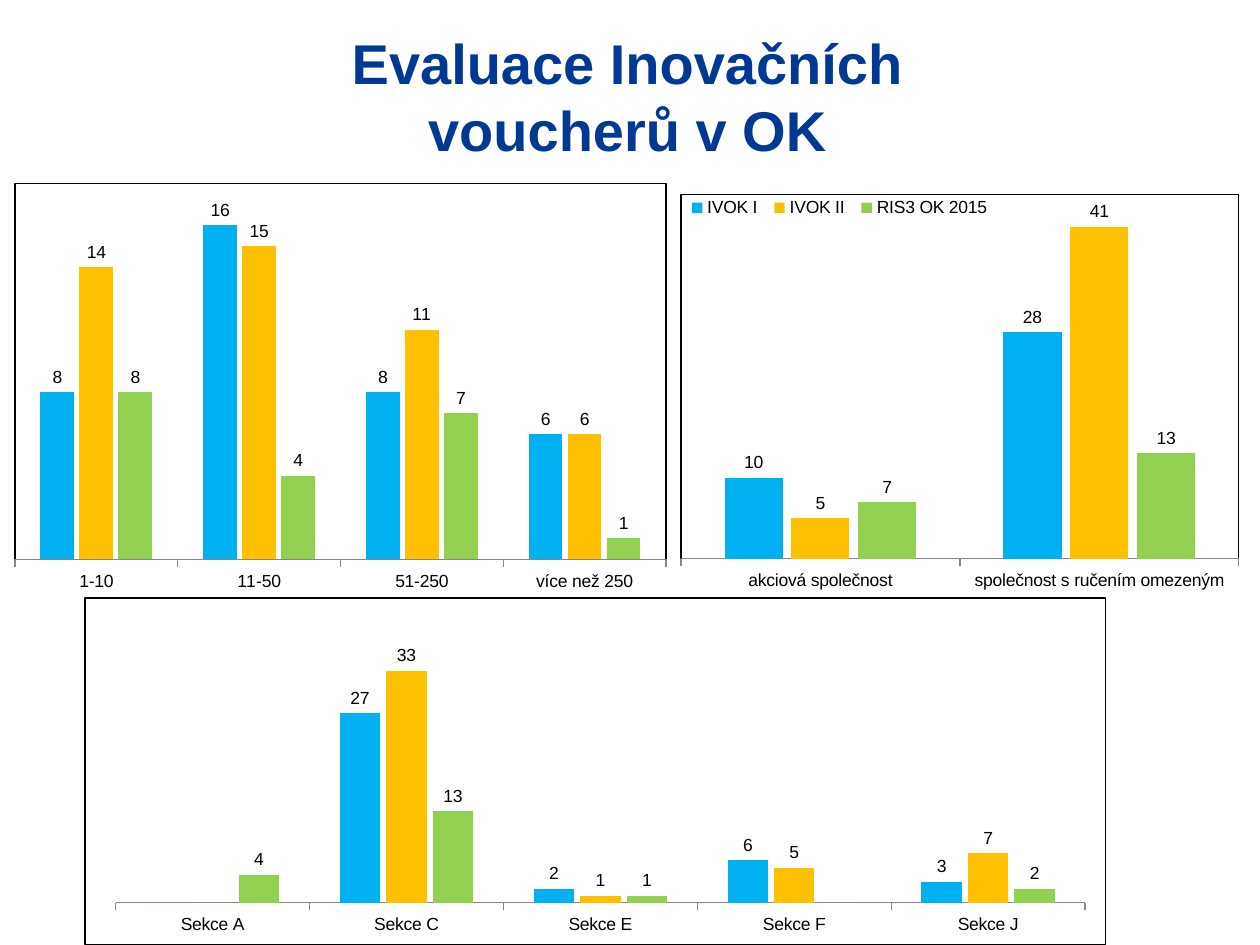
from lxml import etree
from pptx import Presentation
from pptx.chart.data import CategoryChartData
from pptx.dml.color import RGBColor
from pptx.enum.chart import XL_CHART_TYPE, XL_LABEL_POSITION, XL_LEGEND_POSITION, XL_TICK_MARK
from pptx.enum.text import MSO_ANCHOR, PP_ALIGN
from pptx.oxml import parse_xml
from pptx.oxml.ns import nsdecls, qn
from pptx.util import Cm, Pt


def set_text(frame, text, size=10, color="000000", bold=False, align=PP_ALIGN.LEFT):
    frame.text = text
    frame.word_wrap = True
    frame.vertical_anchor = MSO_ANCHOR.MIDDLE
    paragraph = frame.paragraphs[0]
    paragraph.alignment = align
    span = paragraph.runs[0]
    span.font.name = "Arial"
    span.font.size = Pt(size)
    span.font.bold = bold
    span.font.color.rgb = RGBColor.from_string(color)


def set_layout(parent, position, box, inner=False):
    for old in parent.findall(qn("c:layout")):
        parent.remove(old)
    layout = parse_xml(f"<c:layout {nsdecls('c')}><c:manualLayout/></c:layout>")
    settings = [("layoutTarget", "inner")] if inner else []
    settings += [("xMode", "edge"), ("yMode", "edge"), *zip("xywh", box)]
    for name, value in settings:
        etree.SubElement(layout[0], qn(f"c:{name}")).set("val", str(value))
    parent.insert(position, layout)


deck = Presentation()
deck.slide_width, deck.slide_height = Cm(25.4), Cm(19.05)
page = deck.slides.add_slide(deck.slide_layouts[5])

title = page.shapes.title
title.left, title.top, title.width, title.height = Cm(6.15), Cm(0.33), Cm(13), Cm(3.18)
set_text(title.text_frame, "Evaluace Inovačních voucherů v OK",
         size=32, color="003994", bold=True, align=PP_ALIGN.CENTER)

colors = ["00B0F0", "FFC000", "92D050"]
plain_names = ["Series 1", "Series 2", "Series 3"]
call_names = ["IVOK I", "IVOK II", "RIS3 OK 2015"]
charts = [
    dict(at=(0.03, 3.53, 13.67, 8.61), plot=(0.02, 0.02, 0.96, 0.88), top=18,
         framed="plot", names=plain_names,
         categories=["1-10", "11-50", "51-250", "více než 250"],
         values=[(8, 16, 8, 6), (14, 15, 11, 6), (8, 4, 7, 1)]),
    dict(at=(13.49, 3.73, 11.84, 9.19), plot=(0.02, 0.02, 0.95, 0.8), top=45,
         framed="plot", names=call_names, legend=(0.02, 0.02, 0.54, 0.06),
         categories=["akciová společnost", "společnost s ručením omezeným"],
         values=[(10, 28), (5, 41), (7, 13)]),
    dict(at=(1.7, 12.04, 20.6, 7.01), plot=(0.03, 0.17, 0.95, 0.71), top=35,
         framed="chart", names=plain_names,
         categories=["Sekce A", "Sekce C", "Sekce E", "Sekce F", "Sekce J"],
         values=[(0, 27, 2, 6, 3), (0, 33, 1, 5, 7), (4, 13, 1, 0, 2)]),
]

for item in charts:
    data = CategoryChartData()
    data.categories = item["categories"]
    for name, values in zip(item["names"], item["values"]):
        data.add_series(name, values)
    chart = page.shapes.add_chart(
        XL_CHART_TYPE.COLUMN_CLUSTERED, *map(Cm, item["at"]), data).chart
    chart.has_title = False
    chart.font.name = "Arial"
    chart.font.size = Pt(10)
    chart.font.color.rgb = RGBColor.from_string("000000")

    value_axis = chart.value_axis
    value_axis.minimum_scale, value_axis.maximum_scale = 0, item["top"]
    value_axis.has_major_gridlines = False
    value_axis.visible = False
    category_axis = chart.category_axis
    category_axis.major_tick_mark = XL_TICK_MARK.OUTSIDE
    category_axis.format.line.color.rgb = RGBColor.from_string("868686")

    plot = chart.plots[0]
    plot.gap_width, plot.overlap = 150, -15
    plot.vary_by_categories = False
    for series, color in zip(plot.series, colors):
        series.format.fill.solid()
        series.format.fill.fore_color.rgb = RGBColor.from_string(color)
        labels = series.data_labels
        labels.show_value = True
        labels.number_format = "0;;"
        labels.number_format_is_linked = False
        labels.position = XL_LABEL_POSITION.OUTSIDE_END

    chart.has_legend = "legend" in item
    if chart.has_legend:
        chart.legend.position = XL_LEGEND_POSITION.BOTTOM
        chart.legend.include_in_layout = False
        set_layout(chart.legend._element, 1, item["legend"])

    space = chart._chartSpace
    plot_area = space.chart.plotArea
    set_layout(plot_area, 0, item["plot"], inner=True)
    for part, name in ((plot_area, "plot"), (space, "chart")):
        line = "<a:noFill/>"
        if item["framed"] == name:
            line = '<a:solidFill><a:srgbClr val="000000"/></a:solidFill>'
        frame = parse_xml(f'<c:spPr {nsdecls("c", "a")}><a:noFill/>'
                          f'<a:ln w="9525">{line}</a:ln></c:spPr>')
        if name == "plot":
            part.append(frame)
        else:
            part.chart.addnext(frame)

deck.save("out.pptx")
